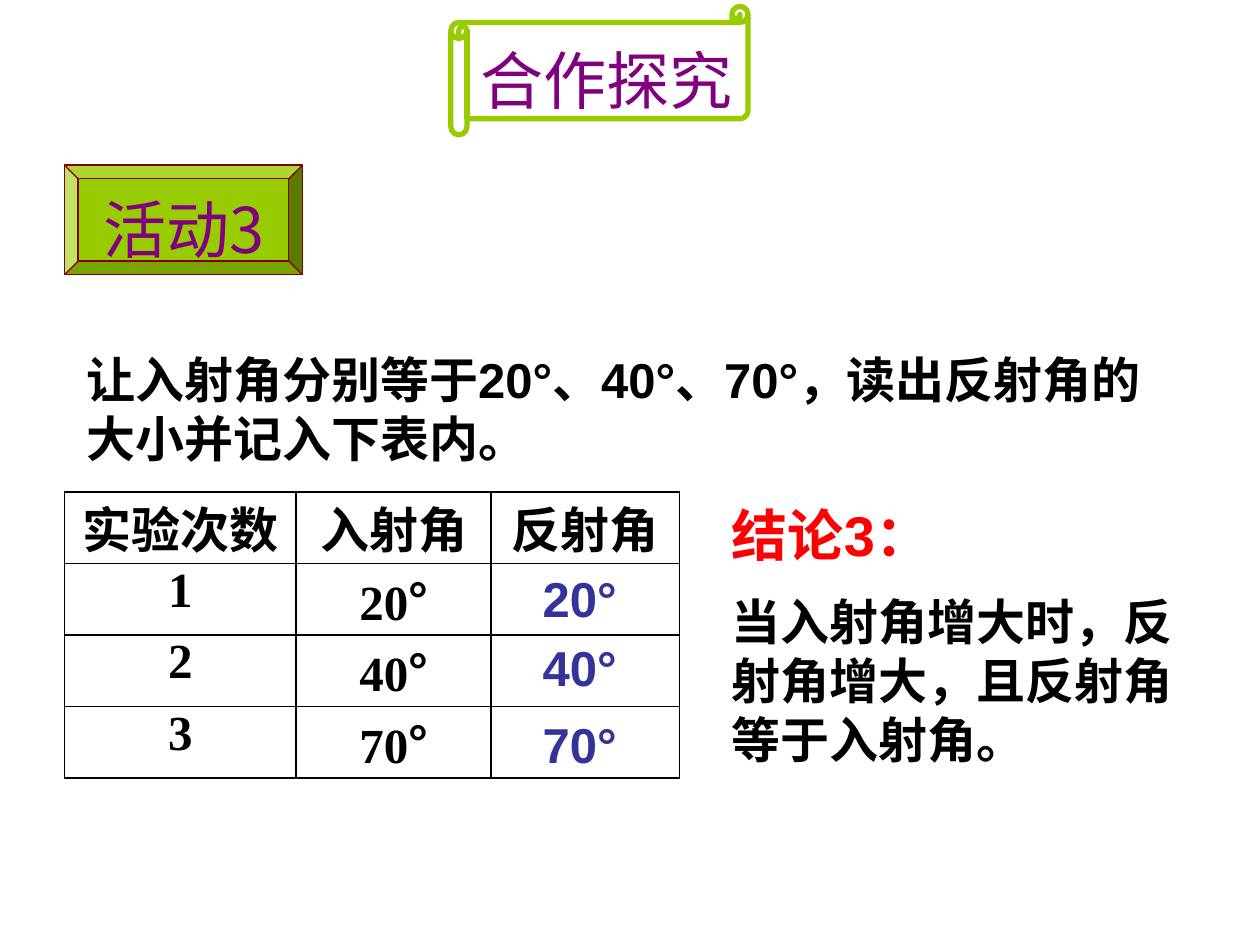
from dataclasses import dataclass

from lxml.etree import SubElement as Sub
from pptx import Presentation
from pptx.dml.color import RGBColor as Rgb
from pptx.enum.shapes import MSO_SHAPE as Kind
from pptx.enum.text import MSO_ANCHOR as Anchor, MSO_AUTO_SIZE as Fit, PP_ALIGN as Align
from pptx.oxml.ns import qn
from pptx.util import Cm, Pt


@dataclass(frozen=True)
class Theme:
    lime: str = "99CC00"
    plum: str = "800080"
    wine: str = "800000"
    navy: str = "333399"
    red: str = "FF0000"
    black: str = "000000"
    hans: str = "Noto Sans CJK SC"
    sans: str = "Arial"
    serif: str = "Times New Roman"
    big: int = 36
    mid: int = 32
    body: int = 28


T = Theme()


@dataclass(frozen=True)
class Box:
    x: float
    y: float
    w: float
    h: float

    def span(self) -> tuple:
        return Cm(self.x), Cm(self.y), Cm(self.w), Cm(self.h)


@dataclass(frozen=True)
class Run:
    text: str
    font: str = T.sans
    size: int = T.body
    hue: str = T.black
    bold: bool = True
    east: str = ""
    edge: float = 0


@dataclass(frozen=True)
class Badge:
    kind: Kind
    frame: Box
    fill: str
    line: str
    width: float
    area: Box
    text: str


@dataclass(frozen=True)
class Note:
    area: Box
    paras: tuple
    wrap: bool = True
    mid: bool = False


BADGES = (
    Badge(Kind.HORIZONTAL_SCROLL, Box(9.09, 0.13, 5.99, 2.59), "", T.lime, 3,
          Box(9.6, 0.84, 5.25, 1.27), "合作探究"),
    Badge(Kind.BEVEL, Box(1.3, 3.33, 4.8, 2.21), T.lime, T.wine, 0.75,
          Box(1.6, 3.85, 4.2, 1.27), "活动3"),
)
ANGLES = ("20", "40", "70")
HEADS = ("实验次数", "入射角", "反射角")
TASK = "让入射角分别等于20°、40°、70°，读出反射角的大小并记入下表内。"
RULE = "当入射角增大时，反射角增大，且反射角等于入射角。"
GRID = Box(1.3, 9.92, 12.4, 5.76)
COLS = (4.67, 3.93, 3.8)
TOPS = (11.33, 12.73, 14.27)
NOTES = (
    Note(Box(1.5, 6.93, 21.79, 2.62), (Run(TASK),), mid=True),
    *(Note(Box(10.69, top, 2.62, 1.45), (Run(f"{num}°", hue=T.navy),), wrap=False)
      for num, top in zip(ANGLES, TOPS)),
    Note(Box(14.5, 9.96, 9.8, 5.77),
         (Run("结论3：", size=T.mid, hue=T.red), Run(RULE))),
)


def tint(node, hue: str) -> None:
    fill = Sub(node, qn("a:solidFill"))
    Sub(fill, qn("a:srgbClr"), val=hue)


def write(para, item: Run) -> None:
    run = para.add_run()
    run.text = item.text
    font = run.font
    props = font._element
    if item.edge:
        tint(Sub(props, qn("a:ln"), w=str(Pt(item.edge))), item.hue)
    font.size, font.bold, font.name = Pt(item.size), item.bold, item.font
    font.color.rgb = Rgb.from_string(item.hue)
    if item.east:
        Sub(props, qn("a:ea"), typeface=item.east)


def mark(slide, item: Badge) -> None:
    group = slide.shapes.add_group_shape()
    shape = group.shapes.add_shape(item.kind, *item.frame.span())
    shape.shadow.inherit = False
    if item.fill:
        shape.fill.solid()
        shape.fill.fore_color.rgb = Rgb.from_string(item.fill)
    else:
        shape.fill.background()
    shape.line.color.rgb = Rgb.from_string(item.line)
    shape.line.width = Pt(item.width)
    frame = group.shapes.add_textbox(*item.area.span()).text_frame
    frame.word_wrap = False
    frame.margin_left = frame.margin_right = 0
    frame.margin_top = frame.margin_bottom = 0
    para = frame.paragraphs[0]
    para.alignment = Align.CENTER
    write(para, Run(item.text, T.hans, T.big, T.plum, False, T.hans, 0.75))


def place(slide, item: Note) -> None:
    frame = slide.shapes.add_textbox(*item.area.span()).text_frame
    frame.word_wrap = item.wrap
    frame.auto_size = Fit.SHAPE_TO_FIT_TEXT
    if item.mid:
        frame.vertical_anchor = Anchor.MIDDLE
    for num, run in enumerate(item.paras):
        para = frame.add_paragraph() if num else frame.paragraphs[0]
        if num:
            para.space_before = Pt(run.size / 2)
        write(para, run)


def style(cell, runs: tuple) -> None:
    cell.margin_top = cell.margin_bottom = 0
    props = cell._tc.get_or_add_tcPr()
    for side in ("lnL", "lnR", "lnT", "lnB"):
        tint(Sub(props, qn(f"a:{side}"), w=str(Pt(1))), T.black)
    cell.fill.background()
    para = cell.text_frame.paragraphs[0]
    para.alignment = Align.CENTER
    for run in runs:
        write(para, run)


def chart(slide) -> None:
    rows = [[(Run(head, T.serif, east=T.hans),) for head in HEADS]]
    for num, angle in enumerate(ANGLES, 1):
        rows.append([(Run(str(num), T.serif),),
                     (Run(angle, T.serif), Run("°", T.hans, east=T.hans)), ()])
    table = slide.shapes.add_table(len(rows), len(COLS), *GRID.span()).table
    table.first_row = table.horz_banding = False
    for col, width in zip(table.columns, COLS):
        col.width = Cm(width)
    for row, cells in zip(table.rows, rows):
        row.height = Cm(GRID.h / len(rows))
        for cell, runs in zip(row.cells, cells):
            style(cell, runs)


def main() -> None:
    deck = Presentation()
    deck.slide_width, deck.slide_height = Cm(25.4), Cm(19.05)
    slide = deck.slides.add_slide(deck.slide_layouts[6])
    for badge in BADGES:
        mark(slide, badge)
    chart(slide)
    for note in NOTES:
        place(slide, note)
    deck.save("out.pptx")


if __name__ == "__main__":
    main()
